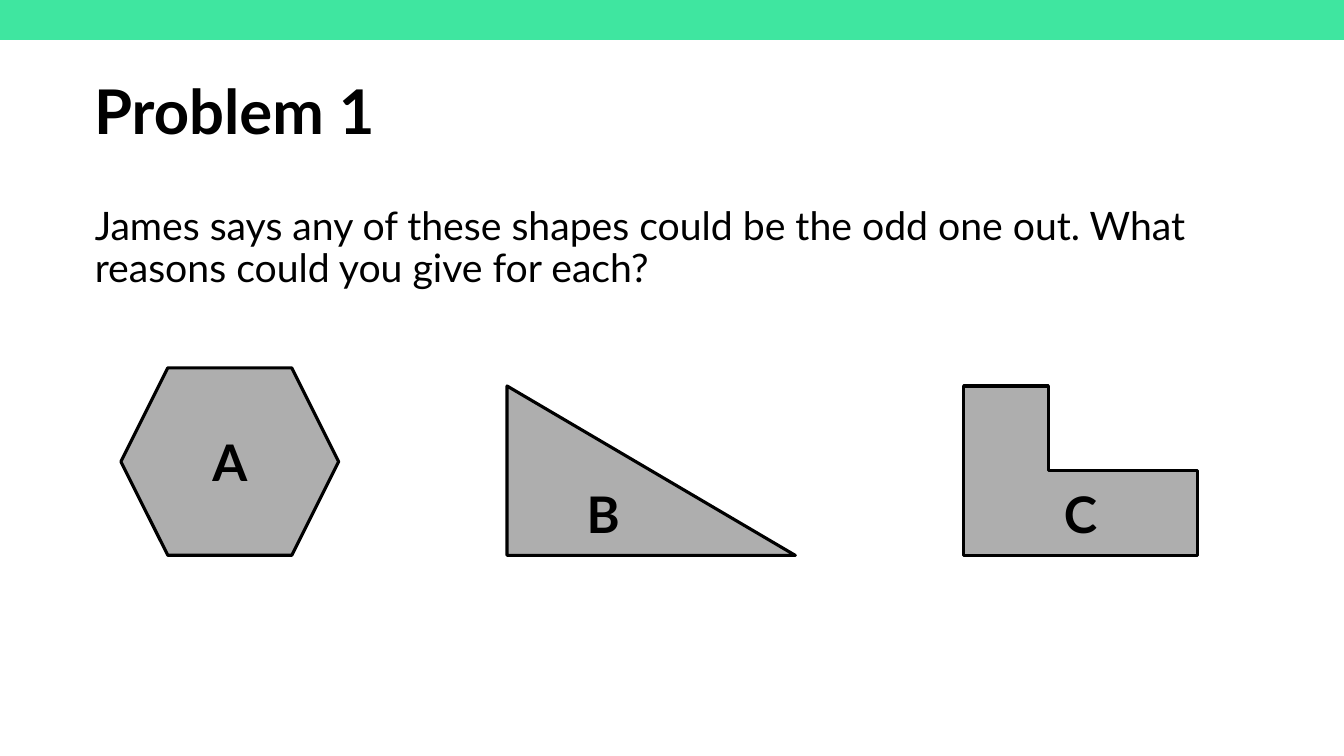
import pptx
import pptx.dml.color
import pptx.enum.shapes
import pptx.enum.text
import pptx.util
import lxml.etree

Pt = pptx.util.Pt
PRESETS = pptx.enum.shapes.MSO_SHAPE
ALIGN = pptx.enum.text.PP_ALIGN
ANCHOR = pptx.enum.text.MSO_ANCHOR
COLORS = {"banner": "3FE6A0", "figure": "AEAEAE", "ink": "000000"}


def color(key):
    return pptx.dml.color.RGBColor.from_string(COLORS[key])


def write(frame, text, size=28, bold=False, align=ALIGN.LEFT, anchor=ANCHOR.TOP, spacing=1.0):
    frame.word_wrap = True
    frame.auto_size = pptx.enum.text.MSO_AUTO_SIZE.NONE
    frame.vertical_anchor = anchor
    paragraph = frame.paragraphs[0]
    paragraph.text = text
    paragraph.alignment = align
    paragraph.line_spacing = spacing
    paragraph.space_before = Pt(0)
    properties = paragraph._p.get_or_add_pPr()
    properties.set("marL", "0")
    properties.set("indent", "0")
    lxml.etree.SubElement(properties, pptx.oxml.ns.qn("a:buNone"))
    font = paragraph.runs[0].font
    font.name, font.size, font.bold = "Lato", Pt(size), bold
    font.color.rgb = color("ink")


class ProblemSlide:
    """Builds a maths problem slide with a banner, text and labelled figures."""

    def __init__(self, deck):
        self.slide = deck.slides.add_slide(deck.slide_layouts[1])

    def place(self, placeholder, left, top, width, height):
        placeholder.left, placeholder.top = Pt(left), Pt(top)
        placeholder.width, placeholder.height = Pt(width), Pt(height)

    def title(self, text, *box):
        heading = self.slide.shapes.title
        self.place(heading, *box)
        write(heading.text_frame, text, size=44, bold=True, anchor=ANCHOR.MIDDLE, spacing=0.9)

    def body(self, text, *box):
        question = self.slide.placeholders[1]
        self.place(question, *box)
        write(question.text_frame, text, spacing=0.9)

    def block(self, preset, fill, *box):
        block = self.slide.shapes.add_shape(preset, *map(Pt, box))
        block.shadow.inherit = False
        block.fill.solid()
        block.fill.fore_color.rgb = color(fill)
        block.line.fill.background()
        return block

    def figure(self, label, preset, *box):
        figure = self.block(preset, "figure", *box)
        figure.line.color.rgb = color("ink")
        figure.line.width = Pt(2.25)
        write(figure.text_frame, label, size=36, bold=True, align=ALIGN.CENTER, anchor=ANCHOR.MIDDLE)


def main():
    deck = pptx.Presentation()
    deck.slide_width, deck.slide_height = Pt(960), Pt(540)
    problem = ProblemSlide(deck)
    problem.block(PRESETS.RECTANGLE, "banner", 0, -1.5, 960, 30)
    problem.title("Problem 1", 60, 29.5, 828, 104.4)
    problem.body(
        "James says any of these shapes could be the odd one out. "
        "What reasons could you give for each?",
        60.5, 144, 828, 342.7,
    )
    baseline = 396.7
    for label, preset, left, width, height in (
        ("A", PRESETS.HEXAGON, 86.4, 155.5, 133.9),
        ("B", PRESETS.RIGHT_TRIANGLE, 362.2, 205.9, 121),
        ("C", PRESETS.CORNER, 688.3, 167, 121),
    ):
        problem.figure(label, preset, left, baseline - height, width, height)
    deck.save("out.pptx")


if __name__ == "__main__":
    main()
